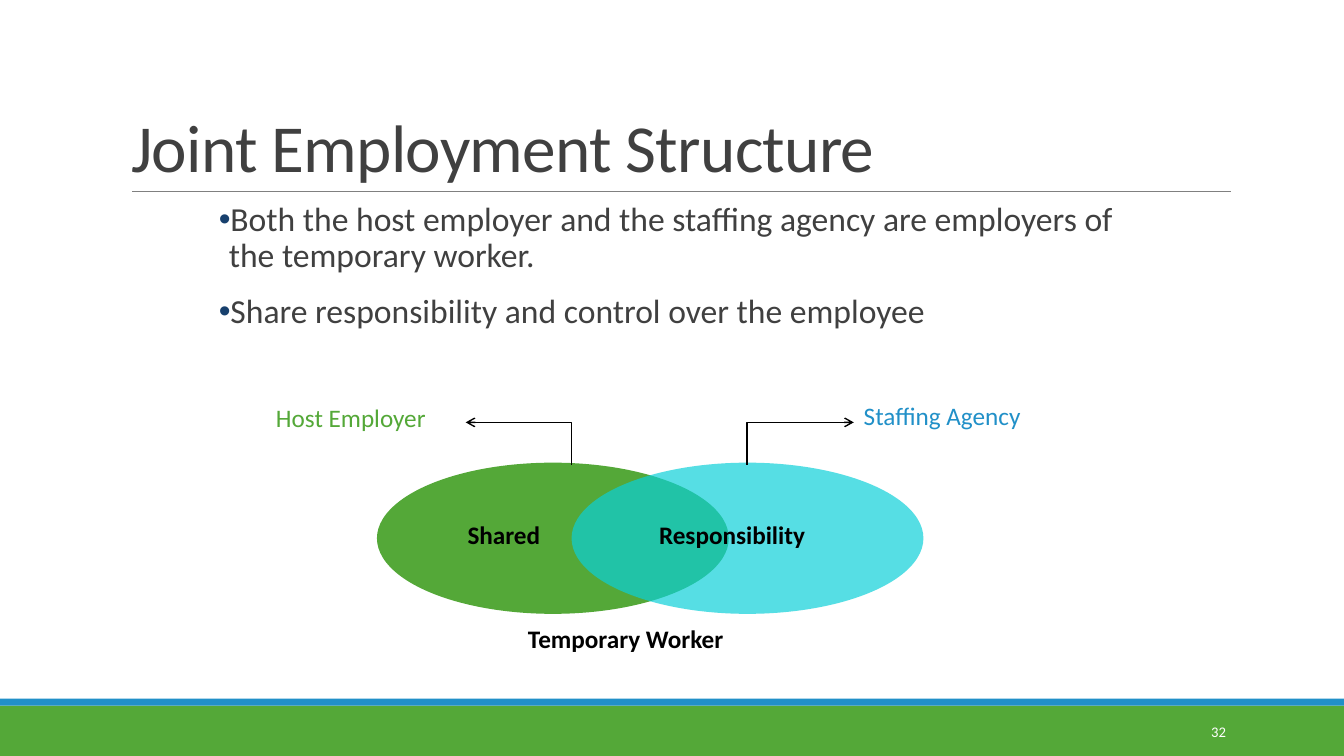
import pptx
import pptx.util
import pptx.dml.color
import pptx.enum.shapes
import pptx.enum.text
import pptx.oxml
import pptx.oxml.ns

theme = {
    "font": "Calibri",
    "green": "54A838", "blue": "2190C8", "aqua": "0BD0D9",
    "text": "404040", "black": "000000", "white": "FFFFFF",
    "rule": "808080", "dot": "17406D",
    "title": 48, "body": 24, "label": 18, "small": 10.5,
}
Pt = pptx.util.Pt
Shape = pptx.enum.shapes.MSO_SHAPE
Line = pptx.enum.shapes.MSO_CONNECTOR
Align = pptx.enum.text.PP_ALIGN
Anchor = pptx.enum.text.MSO_ANCHOR
qn = pptx.oxml.ns.qn

deck = pptx.Presentation()
deck.slide_width = pptx.util.Inches(13.333)
deck.slide_height = pptx.util.Inches(7.5)
slide = deck.slides.add_slide(deck.slide_layouts[1])
shapes = slide.shapes


def grid(*cells):
    """Turn column, row, ... (hundredths of the slide) into lengths."""
    sides = (deck.slide_width, deck.slide_height)
    return [int(cell * sides[i % 2] / 100) for i, cell in enumerate(cells)]


def style(para, size, color, bold=False):
    para.font.name = theme["font"]
    para.font.size = Pt(theme[size])
    para.font.bold = bold
    para.font.color.rgb = pptx.dml.color.RGBColor.from_string(theme[color])


# Footer bars and the two overlapping ovals
oval_top, oval_wide, oval_high = 61.2, 26.18, 20
for kind, color, alpha, box in (
    (Shape.RECTANGLE, "green", 100, (0, 93.33, 100, 6.67)),
    (Shape.RECTANGLE, "blue", 100, (0, 92.4, 100, 0.93)),
    (Shape.OVAL, "green", 100, (28.05, oval_top, oval_wide, oval_high)),
    (Shape.OVAL, "aqua", 69, (42.53, oval_top, oval_wide, oval_high)),
):
    form = shapes.add_shape(kind, *grid(*box))
    form.shadow.inherit = False
    form.line.fill.background()
    form.fill.solid()
    form.fill.fore_color.rgb = pptx.dml.color.RGBColor.from_string(theme[color])
    if alpha < 100:
        tint = form._element.spPr.find(".//" + qn("a:srgbClr"))
        pptx.oxml.ns  # namespace map used by qn
        tint.append(tint.makeelement(qn("a:alpha"), {"val": str(alpha * 1000)}))

# Title rule, and arrows that point from each oval to its label
for kind, color, width, ends in (
    (Line.STRAIGHT, "rule", 0.5, (9.83, 25.33, 91.58, 25.33)),
    (Line.ELBOW, "black", 1, (34.65, 55.87, 42.53, 61.47)),
    (Line.ELBOW, "black", 1, (63.53, 55.87, 55.58, 61.47)),
):
    line = shapes.add_connector(kind, *grid(*ends))
    line.line.width = Pt(width)
    line.line.color.rgb = pptx.dml.color.RGBColor.from_string(theme[color])
    props = line._element.spPr
    if kind == Line.ELBOW:
        geom = props.find(qn("a:prstGeom"))
        geom.set("prst", "bentConnector2")
        stroke = props.find(qn("a:ln"))
        stroke.append(stroke.makeelement(qn("a:headEnd"), {"type": "arrow"}))
    props.append(props.makeelement(qn("a:effectLst"), {}))

# Title
title = shapes.title
title.left, title.top, title.width, title.height = grid(9, 4.13, 82.5, 21.2)
title.text_frame.text = "Joint Employment Structure"
title.text_frame.vertical_anchor = Anchor.BOTTOM
head = title.text_frame.paragraphs[0]
head.alignment = Align.LEFT
head.line_spacing = 0.85
style(head, "title", "text")
head.runs[0].font._element.set("spc", "-50")

# Bullet list
body = slide.placeholders[1]
body.left, body.top, body.width, body.height = grid(16.28, 26.13, 67.5, 68.27)
frame = body.text_frame
frame.auto_size = pptx.enum.text.MSO_AUTO_SIZE.NONE
frame.margin_left = frame.margin_right = 0
frame.text = "\n".join((
    "Both the host employer and the staffing agency are employers of the temporary worker.",
    "Share responsibility and control over the employee",
))
for para in frame.paragraphs:
    style(para, "body", "text")
    para.line_spacing = 0.9
    para.space_before, para.space_after = Pt(12), Pt(2)
    props = para._element.get_or_add_pPr()
    props.set("marL", "91440")
    props.set("indent", "-91440")
    mark = props.makeelement(qn("a:buClr"), {})
    mark.append(mark.makeelement(qn("a:srgbClr"), {"val": theme["dot"]}))
    dot = props.makeelement(qn("a:buChar"), {"char": "•"})
    place = props.index(props.find(qn("a:defRPr")))
    props.insert(place, mark)
    props.insert(place + 1, dot)

# Labels and slide number
for words, size, color, bold, box in (
    ("Temporary Worker", "label", "black", True, (38.55, 81.73, 22.73, 6.4)),
    ("Staffing Agency", "label", "blue", False, (63.53, 52.27, 16.5, 5.33)),
    ("Host Employer", "label", "green", False, (19.8, 52.53, 17.93, 5.33)),
    ("Shared", "label", "black", True, (34.05, 68, 9.6, 6.4)),
    ("Responsibility", "label", "black", True, (48.3, 68, 17.18, 6.4)),
    ("32", "small", "white", False, (81.23, 94.13, 10.73, 5.33)),
):
    frame = shapes.add_textbox(*grid(*box)).text_frame
    frame.word_wrap = True
    frame.text = words
    style(frame.paragraphs[0], size, color, bold)
    if size == "small":
        frame.vertical_anchor = Anchor.MIDDLE
        frame.paragraphs[0].alignment = Align.RIGHT

deck.save("out.pptx")
